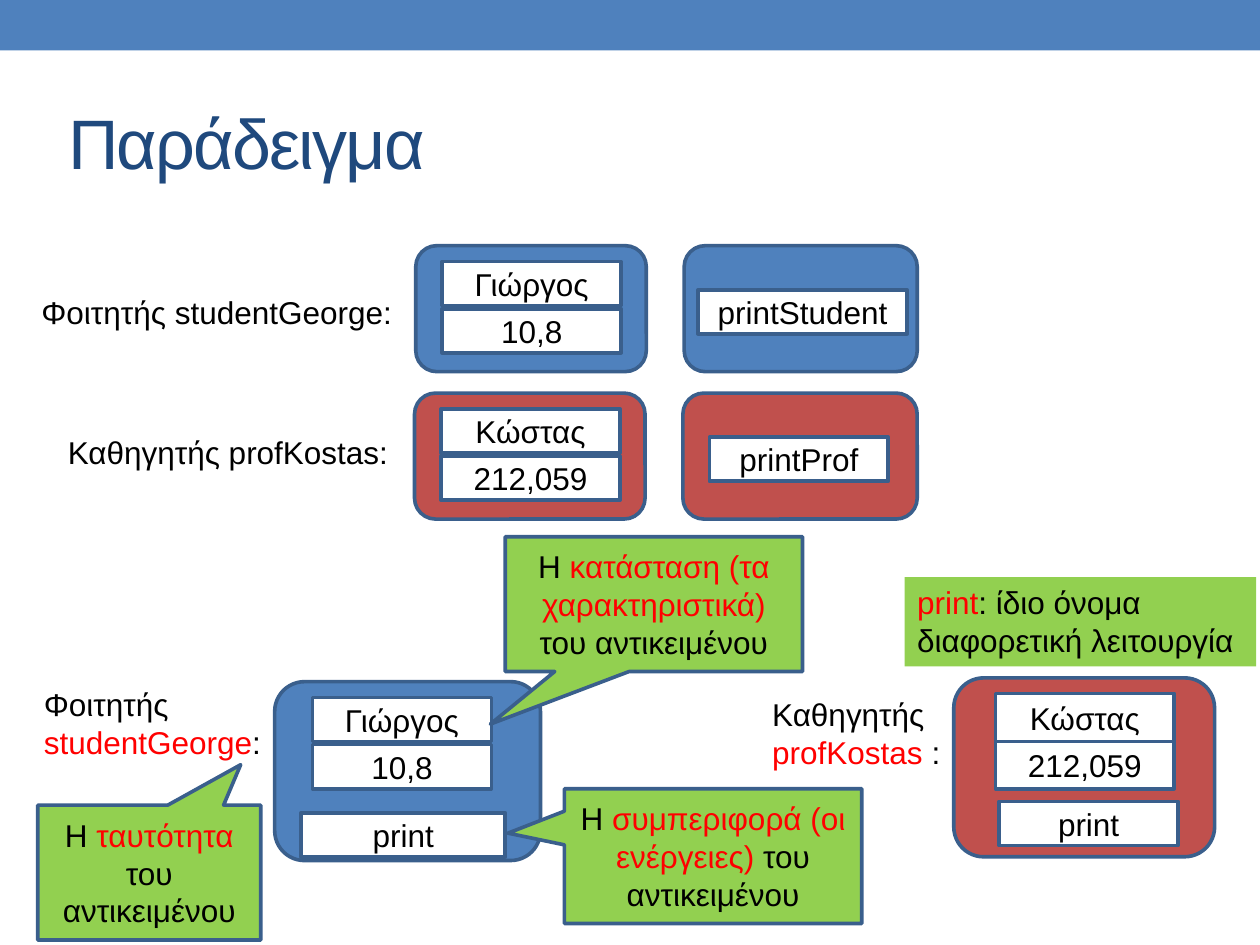
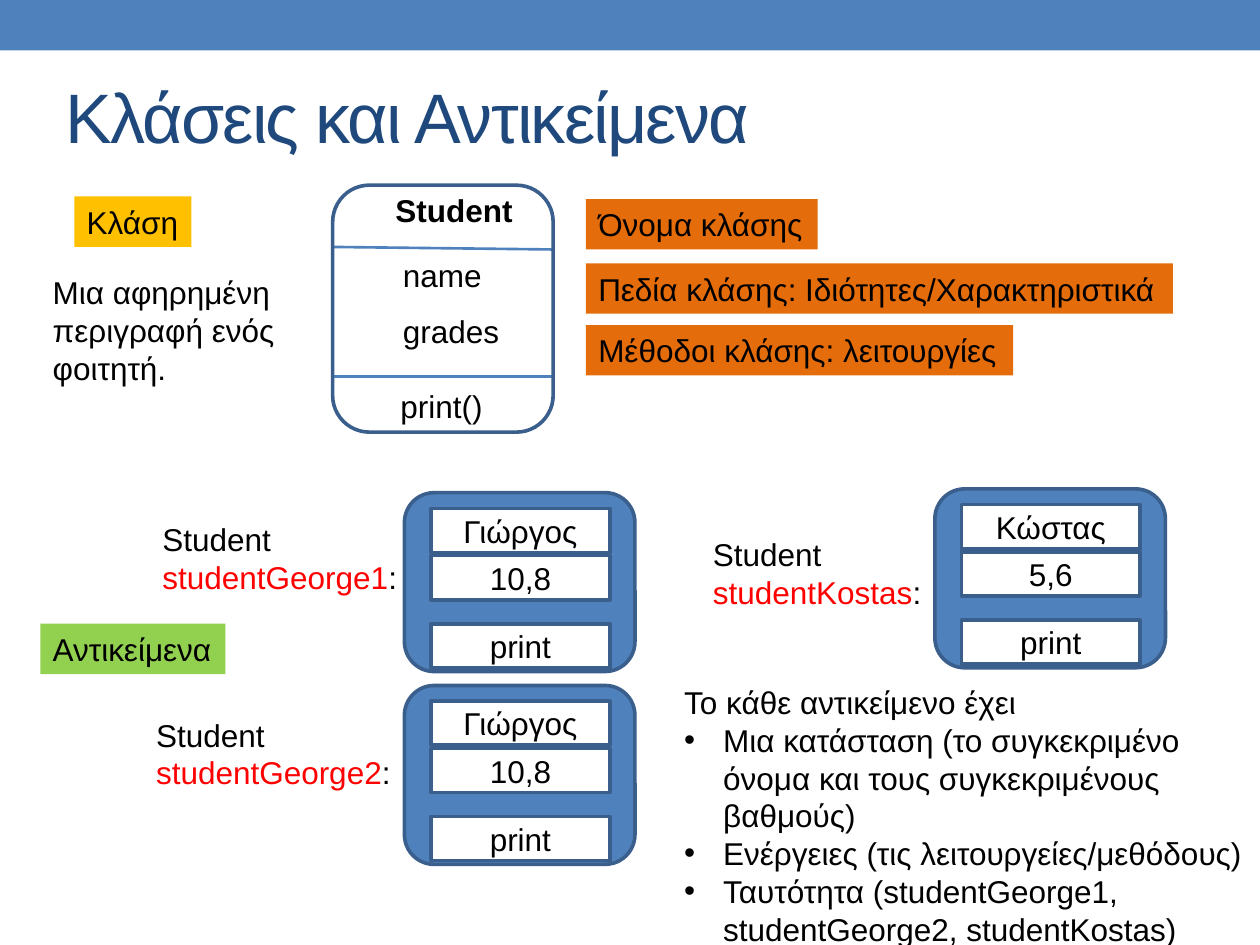
from dataclasses import dataclass

from lxml.etree import SubElement
from pptx import Presentation
from pptx.dml.color import RGBColor
from pptx.enum.shapes import MSO_CONNECTOR, MSO_SHAPE
from pptx.enum.text import MSO_ANCHOR, MSO_AUTO_SIZE, PP_ALIGN
from pptx.oxml.ns import qn
from pptx.util import Inches, Pt

BLUE = RGBColor(0x4F, 0x81, 0xBD)
DARK_BLUE = RGBColor(0x3A, 0x5F, 0x8C)
TITLE_BLUE = RGBColor(0x1F, 0x49, 0x7D)
BRICK = RGBColor(0xC0, 0x50, 0x4D)
GREEN = RGBColor(0x92, 0xD0, 0x50)
AMBER = RGBColor(0xFF, 0xC0, 0x00)
ORANGE = RGBColor(0xE4, 0x6C, 0x0A)
RED = RGBColor(0xFF, 0x00, 0x00)
BLACK = RGBColor(0x00, 0x00, 0x00)
WHITE = RGBColor(0xFF, 0xFF, 0xFF)

FONT = "Arial"
COLUMNS, ROWS = 100, 75
SLIDE_WIDTH, SLIDE_HEIGHT = Inches(10), Inches(7.5)
TITLE_ONLY, TITLE_AND_CONTENT = 5, 1
FIELD_WIDTH, FIELD_HEIGHT = 14.2, 3.5


@dataclass
class Box:
    """A rectangle measured in columns and rows of the slide grid."""
    left: float
    top: float
    width: float
    height: float

    def inner(self, left, top, width, height):
        return Box(self.left + left, self.top + top, width, height)

    def lengths(self):
        return (column(self.left), row(self.top),
                column(self.width), row(self.height))


def column(count):
    return round(count * SLIDE_WIDTH / COLUMNS)


def row(count):
    return round(count * SLIDE_HEIGHT / ROWS)


def place(shape, box):
    shape.left, shape.top, shape.width, shape.height = box.lengths()


def style_font(font, size=18, color=BLACK, bold=False):
    font.name, font.size, font.bold = FONT, Pt(size), bold
    font.color.rgb = color


def write(shape, text, align=PP_ALIGN.LEFT, bold=False):
    """Write one paragraph per line; words between asterisks turn red."""
    frame = shape.text_frame
    for index, line in enumerate(text.split("\n")):
        paragraph = frame.add_paragraph() if index else frame.paragraphs[0]
        paragraph.alignment = align
        for part, words in enumerate(line.split("*")):
            if words:
                run = paragraph.add_run()
                run.text = words
                style_font(run.font, color=RED if part % 2 else BLACK, bold=bold)


def add_outlined(slide, kind, box, fill=None, text=""):
    shape = slide.shapes.add_shape(kind, *box.lengths())
    shape.shadow.inherit = False
    if fill is None:
        shape.fill.background()
    else:
        shape.fill.solid()
        shape.fill.fore_color.rgb = fill
    shape.line.color.rgb = DARK_BLUE
    shape.line.width = Pt(2.08)
    shape.text_frame.word_wrap = True
    shape.text_frame.vertical_anchor = MSO_ANCHOR.MIDDLE
    write(shape, text, PP_ALIGN.CENTER)
    return shape


def add_label(slide, box, text, fill=None, wrap=False, bold=False):
    label = slide.shapes.add_textbox(*box.lengths())
    label.text_frame.word_wrap = wrap
    label.text_frame.auto_size = MSO_AUTO_SIZE.SHAPE_TO_FIT_TEXT
    if fill is not None:
        label.fill.solid()
        label.fill.fore_color.rgb = fill
    write(label, text, bold=bold)


def add_callout(slide, box, text, tip):
    callout = add_outlined(slide, MSO_SHAPE.RECTANGULAR_CALLOUT, box, GREEN, text)
    callout.adjustments[0], callout.adjustments[1] = tip


def add_divider(slide, box, start_row, end_row):
    line = slide.shapes.add_connector(
        MSO_CONNECTOR.STRAIGHT,
        column(box.left), row(box.top + start_row),
        column(box.left + box.width), row(box.top + end_row))
    line.line.color.rgb = BLUE
    line.line.width = Pt(1.5)
    SubElement(line.element.spPr, qn("a:effectLst"))


def add_band(presentation, slide):
    """Draw the top band once and move it to the master, behind all else."""
    band = slide.shapes.add_shape(MSO_SHAPE.RECTANGLE,
                                  *Box(0, 0, COLUMNS, 4).lengths())
    band.shadow.inherit = False
    band.fill.solid()
    band.fill.fore_color.rgb = BLUE
    band.line.fill.background()
    presentation.slide_master.shapes.element.insert(2, band.element)


def add_titled_slide(presentation, layout, title_text, left, top):
    slide = presentation.slides.add_slide(presentation.slide_layouts[layout])
    title = slide.shapes.title
    place(title, Box(left, top, 90, 10.8))
    title.text_frame.text = title_text
    title.text_frame.vertical_anchor = MSO_ANCHOR.MIDDLE
    paragraph = title.text_frame.paragraphs[0]
    paragraph.alignment = PP_ALIGN.LEFT
    style_font(paragraph.runs[0].font, 40, TITLE_BLUE)
    paragraph.runs[0].font._element.set("spc", "-100")
    return slide


def add_card(slide, box, fill, fields):
    """Rounded card with white fields, each (text, left, top, width, height)."""
    add_outlined(slide, MSO_SHAPE.ROUNDED_RECTANGLE, box, fill)
    for text, *position in fields:
        add_outlined(slide, MSO_SHAPE.RECTANGLE, box.inner(*position), WHITE, text)


def state_fields(name, value, inset=2.1, height=FIELD_HEIGHT):
    return [(value, inset, 5, FIELD_WIDTH, height),
            (name, inset, 1.25, FIELD_WIDTH, height)]


def method_field(text, left=2.1, top=10.4, width=FIELD_WIDTH):
    return (text, left, top, width, FIELD_HEIGHT)


def add_separate_cards(slide):
    """State and behaviour of each object kept in two cards."""
    add_label(slide, Box(2.3, 22.8, 30.1, 4), "Φοιτητής studentGeorge:")
    add_card(slide, Box(33, 19.5, 18.3, 10), BLUE, state_fields("Γιώργος", "10,8"))
    add_card(slide, Box(54.3, 19.5, 18.5, 10), BLUE,
             [method_field("printStudent", 1.1, 3.5, 16.6)])

    add_label(slide, Box(4.4, 33.9, 27.7, 4), "Καθηγητής profKostas:")
    add_card(slide, Box(32.9, 31.2, 18.3, 10), BRICK,
             state_fields("Κώστας", "212,059"))
    add_card(slide, Box(54.2, 31.2, 18.6, 10), BRICK,
             [method_field("printProf", top=3.5)])


def add_joined_cards(slide):
    """State and behaviour of each object joined in one card."""
    add_card(slide, Box(21.8, 54.1, 21.1, 14.2), BLUE,
             state_fields("Γιώργος", "10,8", 3)
             + [method_field("print", 2.1, 10.4, 16.2)])
    add_card(slide, Box(75.7, 53.8, 20.7, 14.2), BRICK,
             state_fields("Κώστας", "212,059", 3.3, 3.8)
             + [method_field("print", 3.6, 9.8)])
    add_label(slide, Box(2.5, 53.9, 19.4, 7.1), "Φοιτητής\n*studentGeorge*:")
    add_label(slide, Box(60.3, 54.7, 15.5, 7.1), "Καθηγητής\n*profKostas *:")
    add_label(slide, Box(71.8, 45.8, 27.9, 7.1),
              "*print*: ίδιο όνομα διαφορετική λειτουργία", GREEN, wrap=True)


def add_explanations(slide):
    add_callout(slide, Box(3, 63.9, 17.7, 10.7),
                "Η *ταυτότητα *του αντικειμένου", (0.41, -0.8))
    add_callout(slide, Box(40.1, 42.6, 23.6, 10.7),
                "Η *κατάσταση (τα χαρακτηριστικά) *του αντικειμένου", (-0.55, 0.89))
    add_callout(slide, Box(44.8, 62.6, 23.6, 10.7),
                "Η *συμπεριφορά (οι ενέργειες) *του αντικειμένου", (-0.69, -0.17))


def add_class_diagram(slide, box):
    add_divider(slide, box, 4.9, 5.1)
    add_divider(slide, box, 15.2, 15.2)
    add_outlined(slide, MSO_SHAPE.ROUNDED_RECTANGLE, box)
    add_label(slide, box.inner(4, 0, 11.4, 4), "Student", bold=True)
    for text, left, top, width in (("name", 4.6, 5.1, 8.3),
                                   ("grades", 4.6, 9.6, 9.7),
                                   ("print()", 4.4, 15.5, 8.6)):
        add_label(slide, box.inner(left, top, width, 4), text)


def add_class_notes(slide):
    add_label(slide, Box(5.9, 15.6, 9.3, 4), "Κλάση", AMBER)
    add_label(slide, Box(3.2, 21.2, 21.6, 10.1),
              "Μια αφηρημένη περιγραφή ενός φοιτητή.", wrap=True)
    for text, top, width in (
            ("Όνομα κλάσης", 15.8, 18.4),
            ("Πεδία κλάσης: Ιδιότητες/Χαρακτηριστικά", 20.9, 46.6),
            ("Μέθοδοι κλάσης: λειτουργίες", 25.8, 33.9)):
        add_label(slide, Box(46.5, top, width, 4), text, ORANGE)


def add_instances(slide):
    add_label(slide, Box(3.2, 49.5, 14.7, 4), "Αντικείμενα", GREEN)
    for variable, name, value, card, label in (
            ("studentGeorge1", "Γιώργος", "10,8", (32.1, 39.1), (11.9, 40.8, 20.8)),
            ("studentGeorge2", "Γιώργος", "10,8", (32.1, 54.4), (11.4, 56.3, 20.8)),
            ("studentKostas", "Κώστας", "5,6", (74.2, 38.8), (55.6, 42, 18.7))):
        add_card(slide, Box(*card, 18.3, 14.2), BLUE,
                 state_fields(name, value) + [method_field("print")])
        add_label(slide, Box(*label, 7.1), f"Student\n*{variable}*:")


def add_object_summary(slide, box):
    body = slide.placeholders[1]
    place(body, box)
    body.text_frame.auto_size = MSO_AUTO_SIZE.NONE
    write(body, "Το κάθε αντικείμενο έχει\n"
                "Μια κατάσταση (το συγκεκριμένο όνομα και τους συγκεκριμένους βαθμούς)\n"
                "Ενέργειες (τις λειτουργείες/μεθόδους)\n"
                "Ταυτότητα (studentGeorge1, studentGeorge2, studentKostas)")
    for index, paragraph in enumerate(body.text_frame.paragraphs):
        paragraph.space_before = Pt(0)
        properties = paragraph._p.get_or_add_pPr()
        indent = column(3.1) if index else 0
        properties.set("marL", str(indent))
        properties.set("indent", str(-indent))
        if index:
            SubElement(properties, qn("a:buFont")).set("typeface", FONT)
            SubElement(properties, qn("a:buChar")).set("char", "•")
        else:
            SubElement(properties, qn("a:buNone"))


def main():
    presentation = Presentation()
    presentation.slide_width, presentation.slide_height = SLIDE_WIDTH, SLIDE_HEIGHT

    example = add_titled_slide(presentation, TITLE_ONLY, "Παράδειγμα", 4.4, 5.8)
    add_band(presentation, example)
    add_joined_cards(example)
    add_explanations(example)
    add_separate_cards(example)

    classes = add_titled_slide(presentation, TITLE_AND_CONTENT,
                               "Κλάσεις και Αντικείμενα", 4.2, 3.8)
    add_class_diagram(classes, Box(26.4, 14.7, 17.5, 19.6))
    add_class_notes(classes)
    add_instances(classes)
    add_object_summary(classes, Box(53.3, 53.7, 46.9, 22.2))

    presentation.save("out.pptx")


if __name__ == "__main__":
    main()
